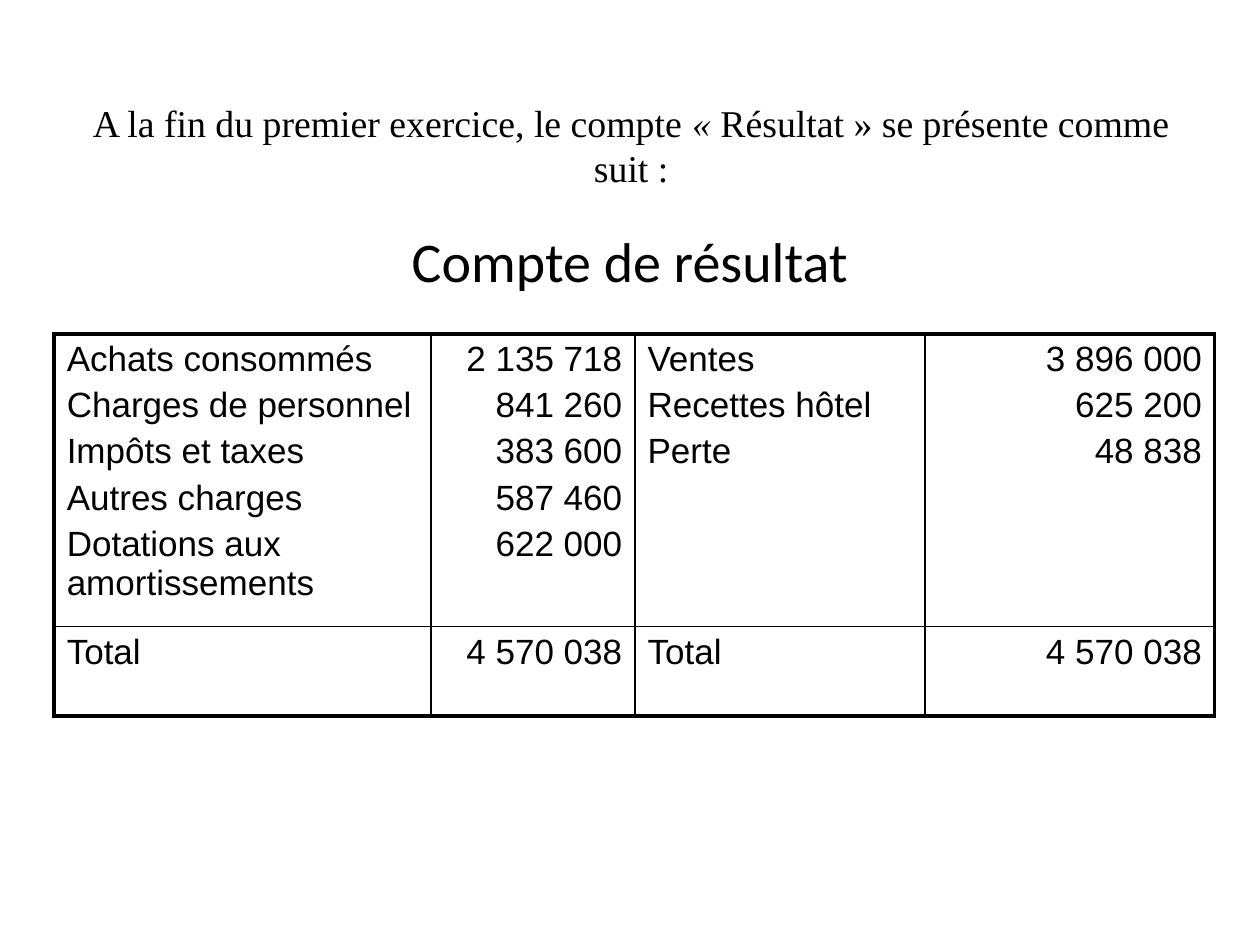
"""Build the income statement slide."""
from dataclasses import dataclass

from lxml import etree
from pptx import Presentation, util as u
from pptx.dml.color import RGBColor
from pptx.enum import text
from pptx.oxml.ns import qn

BLACK = "000000"
THIN, THICK = 1, 2.25
LEFT, CENTER, RIGHT = text.PP_ALIGN.LEFT, text.PP_ALIGN.CENTER, text.PP_ALIGN.RIGHT


@dataclass
class Run:
    text: str
    italic: bool = False


@dataclass
class Style:
    font: str
    size: float
    align: text.PP_ALIGN
    before: float = 0


@dataclass
class Column:
    width: float
    align: text.PP_ALIGN
    entries: list[str]
    total: str


TITLE = [
    Run("A la fin du premier exercice, le compte "),
    Run("« ", italic=True),
    Run("Résultat » se présente comme suit :"),
]
COLUMNS = [
    Column(2.99, LEFT, ["Achats consommés", "Charges de personnel", "Impôts et taxes",
                        "Autres charges", "Dotations aux amortissements"], "Total"),
    Column(1.62, RIGHT, ["2 135 718", "841 260", "383 600", "587 460", "622 000"],
           "4 570 038"),
    Column(2.3, LEFT, ["Ventes", "Recettes hôtel", "Perte"], "Total"),
    Column(2.3, RIGHT, ["3 896 000", "625 200", "48 838"], "4 570 038"),
]
ROW_HEIGHTS = [2.22, 0.71]


def color(value: str) -> RGBColor:
    return RGBColor.from_string(value)


def write(tf, paragraphs: list[list[Run]], style: Style) -> None:
    for i, runs in enumerate(paragraphs):
        p = tf.paragraphs[0] if i == 0 else tf.add_paragraph()
        p.alignment = style.align
        p.space_before = u.Pt(style.before)
        for run in runs:
            r = p.add_run()
            r.text = run.text
            r.font.name = style.font
            r.font.size = u.Pt(style.size)
            r.font.italic = run.italic
            r.font.color.rgb = color(BLACK)


def add_text(s, left: float, top: float, width: float, height: float,
             runs: list[Run], style: Style):
    sp = s.shapes.add_textbox(u.Inches(left), u.Inches(top),
                              u.Inches(width), u.Inches(height))
    sp.text_frame.word_wrap = True
    write(sp.text_frame, [runs], style)
    return sp.text_frame


def set_border(cell, side: str, width: float) -> None:
    tc_pr = cell._tc.get_or_add_tcPr()
    ln = etree.SubElement(tc_pr, qn(f"a:ln{side}"), w=str(u.Pt(width)))
    fill = etree.SubElement(ln, qn("a:solidFill"))
    etree.SubElement(fill, qn("a:srgbClr"), val=BLACK)


def add_accounts(s, left: float, top: float) -> None:
    last_row, last_col = len(ROW_HEIGHTS) - 1, len(COLUMNS) - 1
    frame = s.shapes.add_table(
        len(ROW_HEIGHTS), len(COLUMNS), u.Inches(left), u.Inches(top),
        u.Inches(sum(c.width for c in COLUMNS)), u.Inches(sum(ROW_HEIGHTS)))
    table = frame.table
    table.first_row = table.horz_banding = False
    for row, height in zip(table.rows, ROW_HEIGHTS):
        row.height = u.Inches(height)
    for j, column in enumerate(COLUMNS):
        table.columns[j].width = u.Inches(column.width)
        style = Style("Arial", 20, column.align, before=4)
        for i, lines in enumerate([column.entries, [column.total]]):
            cell = table.cell(i, j)
            write(cell.text_frame, [[Run(line)] for line in lines], style)
            outer = {"L": j == 0, "R": j == last_col, "T": i == 0, "B": i == last_row}
            for side, is_outer in outer.items():
                set_border(cell, side, THICK if is_outer else THIN)
            cell.fill.background()


def main() -> None:
    prs = Presentation()
    prs.slide_width, prs.slide_height = u.Inches(10), u.Inches(7.5)
    s = prs.slides.add_slide(prs.slide_layouts[6])
    tf = add_text(s, 0.51, 0.68, 9, 1.25, TITLE, Style("Times New Roman", 21.6, CENTER))
    tf.vertical_anchor = text.MSO_ANCHOR.MIDDLE
    tf.margin_bottom = u.Inches(0.36)
    add_accounts(s, 0.43, 2.65)
    add_text(s, 0.5, 1.75, 9, 4.95, [Run("Compte de résultat")],
             Style("Calibri", 32, CENTER, before=6.4))
    prs.save("out.pptx")


if __name__ == "__main__":
    main()
